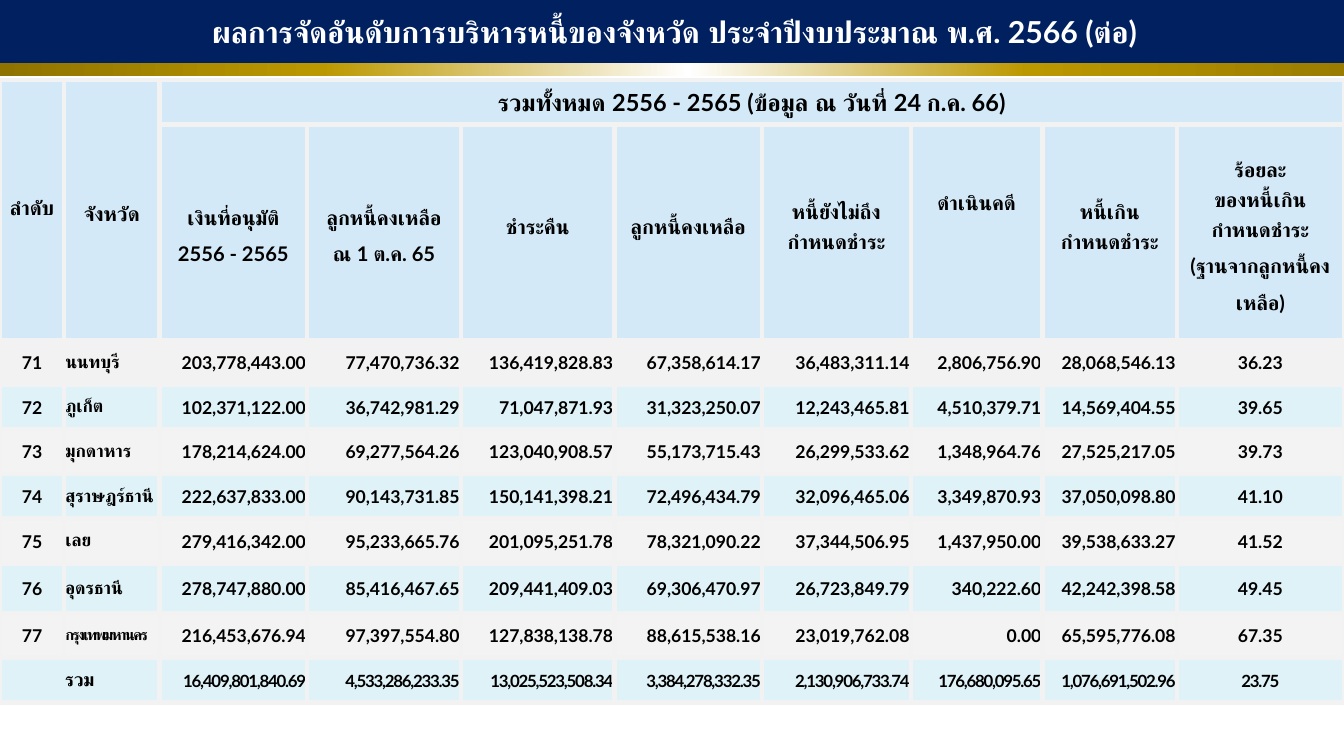
from lxml import etree
from pptx import Presentation
from pptx import util as u
from pptx.dml.color import RGBColor
from pptx.enum import shapes, text
from pptx.oxml import ns

FONT = "Lato"
NAVY = RGBColor(0x00, 0x20, 0x60)
WHITE = RGBColor(0xFF, 0xFF, 0xFF)
BLACK = RGBColor(0x00, 0x00, 0x00)
HEADER_BLUE = RGBColor(0xCA, 0xE4, 0xF6)
BAND_BLUE = RGBColor(0xD7, 0xEF, 0xF5)
GREY = RGBColor(0xF2, 0xF2, 0xF2)
GOLD_STOPS = [
    (0, RGBColor(0x8E, 0x73, 0x00)),
    (24, RGBColor(0xBC, 0x98, 0x00)),
    (51, WHITE),
    (76, RGBColor(0xBC, 0x98, 0x00)),
    (100, RGBColor(0x9A, 0x7D, 0x00)),
]
LEFT, CENTER, RIGHT = text.PP_ALIGN.LEFT, text.PP_ALIGN.CENTER, text.PP_ALIGN.RIGHT
TOP, MIDDLE = text.MSO_ANCHOR.TOP, text.MSO_ANCHOR.MIDDLE

TITLE = "ผลการจัดอันดับการบริหารหนี้ของจังหวัด ประจำปีงบประมาณ พ.ศ. 2566 (ต่อ)"
PERIOD = "รวมทั้งหมด 2556 - 2565 (ข้อมูล ณ วันที่ 24 ก.ค. 66)"
COLUMN_WIDTHS = [0.53, 0.79, 1.22, 1.27, 1.27, 1.22, 1.23, 1.09, 1.11, 1.38]
ROW_HEIGHTS = [0.37, 1.78] + [0.37] * 5 + [0.41] + [0.37] * 2

# Heading, bottom inset; "\v" is a line break
SIDE_HEADINGS = [("ลำดับ", 0.1), ("จังหวัด", 0)]
HEADINGS = [
    ("เงินที่อนุมัติ\v2556 - 2565", 0),
    ("ลูกหนี้คงเหลือ\nณ 1 ต.ค. 65", 0),
    ("ชำระคืน", 0.16),
    ("ลูกหนี้คงเหลือ", 0.16),
    ("หนี้ยังไม่ถึง\vกำหนดชำระ", 0.16),
    ("ดำเนินคดี", 0),
    ("หนี้เกิน\vกำหนดชำระ", 0.16),
    ("ร้อยละ\vของหนี้เกิน\vกำหนดชำระ\v(ฐานจากลูกหนี้คงเหลือ)", 0),
]
LAWSUIT = "ดำเนินคดี"
LONG_PROVINCE = "กรุงเทพมหานคร"
PROVINCES = [
    "71|นนทบุรี|203,778,443.00|77,470,736.32|136,419,828.83|67,358,614.17|36,483,311.14|2,806,756.90|28,068,546.13|36.23",
    "72|ภูเก็ต|102,371,122.00|36,742,981.29|71,047,871.93|31,323,250.07|12,243,465.81|4,510,379.71|14,569,404.55|39.65",
    "73|มุกดาหาร|178,214,624.00|69,277,564.26|123,040,908.57|55,173,715.43|26,299,533.62|1,348,964.76|27,525,217.05|39.73",
    "74|สุราษฎร์ธานี|222,637,833.00|90,143,731.85|150,141,398.21|72,496,434.79|32,096,465.06|3,349,870.93|37,050,098.80|41.10",
    "75|เลย|279,416,342.00|95,233,665.76|201,095,251.78|78,321,090.22|37,344,506.95|1,437,950.00|39,538,633.27|41.52",
    "76|อุดรธานี|278,747,880.00|85,416,467.65|209,441,409.03|69,306,470.97|26,723,849.79|340,222.60|42,242,398.58|49.45",
    "77|กรุงเทพมหานคร|216,453,676.94|97,397,554.80|127,838,138.78|88,615,538.16|23,019,762.08|0.00|65,595,776.08|67.35",
]
TOTALS = "16,409,801,840.69|4,533,286,233.35|13,025,523,508.34|3,384,278,332.35|2,130,906,733.74|176,680,095.65|1,076,691,502.96|23.75"


def write(text_frame, words, size, color, align, line_spacing=None, tracking=0):
    text_frame.text = words
    for paragraph in text_frame.paragraphs:
        paragraph.alignment = align
        paragraph.line_spacing = line_spacing
        for run in paragraph.runs:
            run.font.name = FONT
            run.font.size = u.Pt(size)
            run.font.bold = True
            run.font.color.rgb = color
            if tracking:
                run.font._element.set("spc", str(round(tracking * 100)))


def style_cell(cell, color, opacity):
    """Borders come before the fill in the cell properties."""
    properties = cell._tc.get_or_add_tcPr()
    for side in ("lnL", "lnR", "lnT", "lnB"):
        line = etree.SubElement(properties, ns.qn(f"a:{side}"), w=str(u.Pt(3)))
        solid = etree.SubElement(line, ns.qn("a:solidFill"))
        etree.SubElement(solid, ns.qn("a:srgbClr"), val=str(GREY))
    cell.fill.solid()
    cell.fill.fore_color.rgb = color
    if opacity < 100:
        tint = properties.find(ns.qn("a:solidFill")).find(ns.qn("a:srgbClr"))
        etree.SubElement(tint, ns.qn("a:alpha"), val=str(opacity * 1000))
    cell.margin_left = cell.margin_right = cell.margin_top = u.Inches(0.01)
    cell.margin_bottom = 0
    cell.vertical_anchor = MIDDLE


def add_bar(group, left, top, width, height):
    bar = group.shapes.add_shape(
        shapes.MSO_SHAPE.RECTANGLE, *map(u.Inches, (left, top, width, height)))
    bar.shadow.inherit = False
    bar.line.fill.background()
    return bar


def add_title_band(slide, left, top, width, height):
    group = slide.shapes.add_group_shape()

    # Gold strip showing below the navy bar
    strip = add_bar(group, left, top, width, height)
    strip.fill.gradient()
    strip.fill.gradient_angle = 0
    stops = strip._element.spPr.find(ns.qn("a:gradFill")).find(ns.qn("a:gsLst"))
    for stop in list(stops):
        stops.remove(stop)
    for position, color in GOLD_STOPS:
        stop = etree.SubElement(stops, ns.qn("a:gs"), pos=str(position * 1000))
        etree.SubElement(stop, ns.qn("a:srgbClr"), val=str(color))

    # Navy bar with the title
    bar = add_bar(group, left, top, width, height - 0.11)
    bar.fill.solid()
    bar.fill.fore_color.rgb = NAVY
    bar.text_frame.vertical_anchor = MIDDLE
    bar.text_frame.word_wrap = True
    write(bar.text_frame, TITLE, 18, WHITE, CENTER)


def fill_headings(table):
    for row in (0, 1):
        for column in range(len(COLUMN_WIDTHS)):
            style_cell(table.cell(row, column), HEADER_BLUE, 80)
    for column in (0, 1):
        table.cell(0, column).merge(table.cell(1, column))
    table.cell(0, 2).merge(table.cell(0, 9))
    write(table.cell(0, 2).text_frame, PERIOD, 14, BLACK, CENTER)

    for column, (heading, bottom) in enumerate(SIDE_HEADINGS + HEADINGS):
        cell = table.cell(0 if column < 2 else 1, column)
        cell.margin_bottom = u.Inches(bottom)
        spacing = 1.5
        if heading == LAWSUIT:
            cell.vertical_anchor = TOP
            cell.margin_top = u.Inches(0.58)
            spacing = None
        write(cell.text_frame, heading, 12, BLACK, CENTER, spacing)


def fill_provinces(table):
    aligns = [CENTER, LEFT] + [RIGHT] * 7 + [CENTER]
    for index, record in enumerate(PROVINCES):
        color, opacity = (BAND_BLUE, 80) if index % 2 else (GREY, 90 if index else 100)
        for column, value in enumerate(record.split("|")):
            cell = table.cell(index + 2, column)
            style_cell(cell, color, opacity)
            size, tracking = (9, -1) if value == LONG_PROVINCE else (10.5, 0)
            write(cell.text_frame, value, size, BLACK, aligns[column], None, tracking)


def fill_totals(table):
    row = len(ROW_HEIGHTS) - 1
    for column in range(len(COLUMN_WIDTHS)):
        style_cell(table.cell(row, column), BAND_BLUE, 80)
    table.cell(row, 0).merge(table.cell(row, 1))
    write(table.cell(row, 0).text_frame, "รวม", 11, BLACK, CENTER)
    for column, value in enumerate(TOTALS.split("|"), 2):
        align = CENTER if column == 9 else RIGHT
        write(table.cell(row, column).text_frame, value, 10, BLACK, align, None, -0.7)


def add_debt_table(slide, left, top, width, height):
    frame = slide.shapes.add_table(
        len(ROW_HEIGHTS), len(COLUMN_WIDTHS), *map(u.Inches, (left, top, width, height)))
    table = frame.table
    table.first_row = table.horz_banding = False
    for column, column_width in zip(table.columns, COLUMN_WIDTHS):
        column.width = u.Inches(column_width)
    for row, row_height in zip(table.rows, ROW_HEIGHTS):
        row.height = u.Inches(row_height)
    fill_headings(table)
    fill_provinces(table)
    fill_totals(table)


def main():
    presentation = Presentation()
    presentation.slide_width = u.Inches(11.11)
    presentation.slide_height = u.Inches(6.25)
    slide = presentation.slides.add_slide(presentation.slide_layouts[6])
    add_debt_table(slide, 0, 0.66, sum(COLUMN_WIDTHS), sum(ROW_HEIGHTS))
    add_title_band(slide, 0, 0, 11.15, 0.63)
    presentation.save("out.pptx")


if __name__ == "__main__":
    main()
